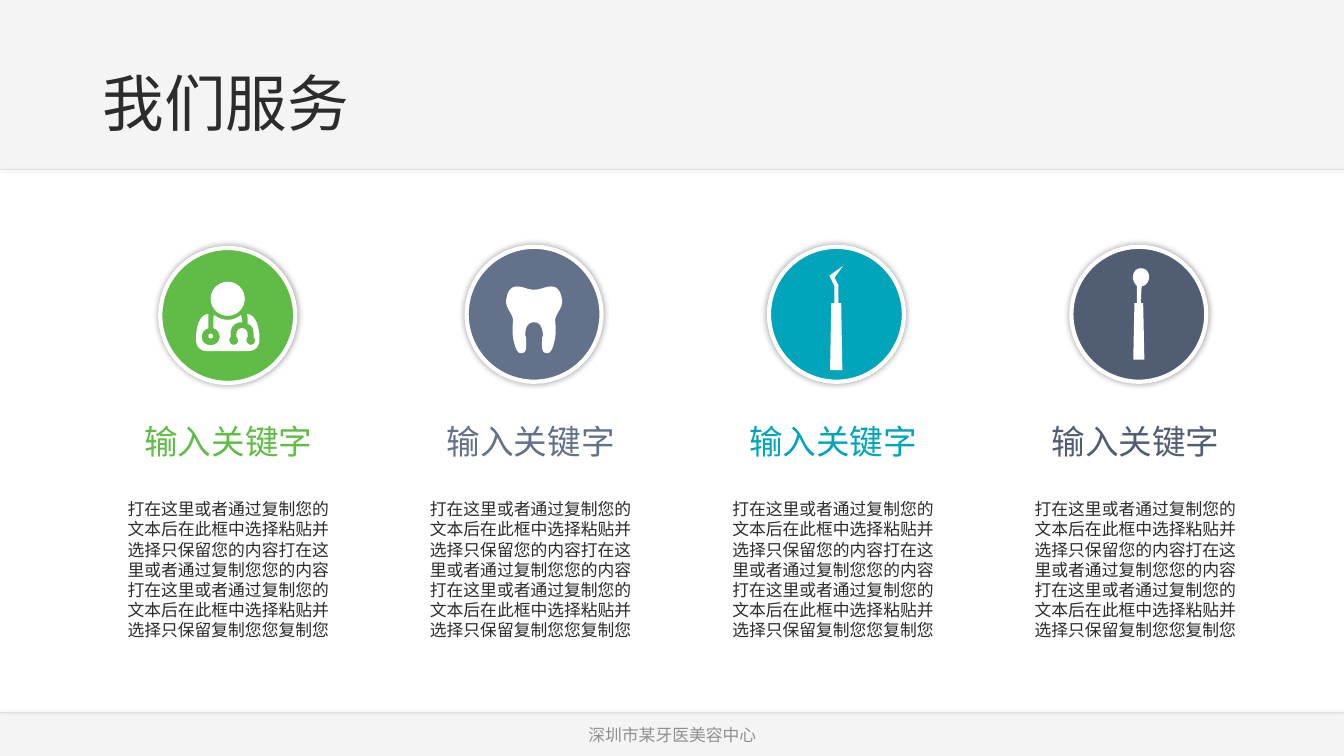
import math

from lxml import etree
from pptx import Presentation
from pptx.dml.color import RGBColor
from pptx.enum import shapes, text
from pptx.oxml import ns
from pptx.util import Cm, Pt

INK = RGBColor(0x2C, 0x2C, 0x2C)
WHITE = RGBColor(0xFF, 0xFF, 0xFF)
BAND = RGBColor(0xF4, 0xF4, 0xF4)
RULE = RGBColor(0xE0, 0xE0, 0xE0)
MUTED = RGBColor(0x90, 0x90, 0x90)
GREEN = RGBColor(0x60, 0xBC, 0x46)
SLATE = RGBColor(0x63, 0x71, 0x8B)
TEAL = RGBColor(0x00, 0xA5, 0xBC)
NAVY = RGBColor(0x51, 0x5D, 0x73)

WIDTH, HEIGHT = 33.87, 19.05
COLUMN_LEFT, COLUMN_PITCH, COLUMN_WIDTH = 2.87, 7.62, 5.77
CIRCLE_SIZE = 3.4
KEYWORD = "输入关键字"
DESCRIPTION = (
    "打在这里或者通过复制您的文本后在此框中选择粘贴并选择只保留您的内容"
    "打在这里或者通过复制您您的内容打在这里或者通过复制您的文本后在此框中"
    "选择粘贴并选择只保留复制您您复制您"
)


def circle(x, y, radius, count=32):
    return [
        (x + radius * math.cos(math.tau * i / count), y + radius * math.sin(math.tau * i / count))
        for i in range(count)
    ]


def flatten(nodes, steps=8):
    """Turn nodes into points; a node of six numbers is a Bézier segment."""
    points = []
    for node in nodes:
        if len(node) == 2:
            points.append(node)
            continue
        controls = [points[-1], node[:2], node[2:4], node[4:]]
        for step in range(1, steps + 1):
            t = step / steps
            weights = ((1 - t) ** 3, 3 * t * (1 - t) ** 2, 3 * t * t * (1 - t), t ** 3)
            points.append(tuple(
                sum(w * c[axis] for w, c in zip(weights, controls)) for axis in (0, 1)
            ))
    return points


# Icon outlines: offsets from the circle's centre, in cm / 100.
DOCTOR = [
    circle(0, -42, 43),
    circle(-43, 52, 6),
    [(80, 60), (80, 78, 70, 90, 50, 90), (-50, 90), (-70, 90, -80, 78, -80, 60),
     (-80, 30, -72, -2, -49, -4), (-49, 32), (-72, 38, -72, 75, -43, 75),
     (-14, 75, -14, 38, -36, 32), (-36, 9), (-36, 4, -36, 2, -34, -1),
     (-14, 15, 14, 15, 33, -1), (36, 9), (36, 17), (15, 17, 7, 30, 7, 47), (7, 54),
     (0, 62, 6, 74, 15, 74), (26, 74, 30, 62, 22, 54), (22, 47),
     (22, 27, 50, 27, 50, 47), (50, 54), (43, 62, 49, 74, 58, 74),
     (69, 74, 72, 62, 65, 54), (65, 47), (65, 32, 62, 26, 50, 21),
     (50, 9), (50, 4, 50, 0, 48, -4), (72, -2, 80, 30, 80, 60)],
]
TOOTH = [[
    (0, 20), (15, 20, 20, 32, 22, 48), (23, 51, 22, 55, 20, 60),
    (20, 81, 17, 98, 33, 98), (43, 98, 48, 84, 53, 60), (56, 36, 53, 22, 53, 12),
    (58, -8, 76, -18, 69, -44), (66, -58, 59, -66, 51, -69),
    (33, -74, 20, -62, 0, -62), (-20, -62, -33, -74, -51, -69),
    (-59, -66, -66, -58, -69, -44), (-76, -18, -58, -8, -53, 12),
    (-53, 22, -56, 36, -53, 60), (-48, 84, -43, 98, -33, 98),
    (-17, 98, -20, 81, -20, 60), (-22, 55, -23, 51, -22, 48), (-22, 32, -15, 20, 0, 20),
]]
PROBE = [[
    (17, -122), (-10, -103), (-18, -97), (-5, -71), (-5, -28), (-13, -28), (-16, 141),
    (15, 141), (12, -28), (5, -28), (5, -74), (-5, -92),
]]
MIRROR = [
    [(-11, -28), (11, -28), (14, 114), (-14, 114)],
    [(5, -116), (18, -116, 26, -106, 26, -94), (26, -82, 18, -72, 7, -70), (5, -28),
     (-5, -28), (-5, -72), (-10, -76, -15, -84, -15, -95), (-14, -107, -6, -116, 5, -116)],
]


class SlideBuilder:
    def __init__(self, presentation):
        self.slide = presentation.slides.add_slide(presentation.slide_layouts[5])
        self.shapes = self.slide.shapes

    def paint(self, shape, fill, line=None):
        shape.shadow.inherit = False
        shape.fill.solid()
        shape.fill.fore_color.rgb = fill
        if line is None:
            shape.line.fill.background()
        else:
            shape.line.color.rgb = line
            shape.line.width = Pt(3)

    def add_shadow(self, shape, blur, distance, degrees, opacity):
        properties = shape._element.spPr
        effects = properties.find(ns.qn("a:effectLst"))
        if effects is None:
            effects = etree.SubElement(properties, ns.qn("a:effectLst"))
        shadow = etree.SubElement(
            effects, ns.qn("a:outerShdw"), blurRad=str(Pt(blur)), dist=str(Pt(distance)),
            dir=str(degrees * 60000), algn="ctr", rotWithShape="0",
        )
        color = etree.SubElement(shadow, ns.qn("a:srgbClr"), val="000000")
        etree.SubElement(color, ns.qn("a:alpha"), val=str(opacity * 1000))

    def band(self, top, height, rule_top, shadow_degrees):
        shape = self.shapes.add_shape(
            shapes.MSO_SHAPE.RECTANGLE, 0, Cm(top), Cm(WIDTH), Cm(height)
        )
        self.paint(shape, BAND)
        rule = self.shapes.add_connector(
            shapes.MSO_CONNECTOR.STRAIGHT, 0, Cm(rule_top), Cm(WIDTH), Cm(rule_top)
        )
        rule.line.color.rgb = RULE
        rule.line.width = Pt(0.5)
        self.add_shadow(rule, 2, 1, shadow_degrees, 10)

    def fill_text(self, frame, content, size, color, font="Calibri"):
        paragraph = frame.paragraphs[0]
        run = paragraph.add_run()
        run.text = content
        run.font.name = font
        run.font.size = Pt(size)
        run.font.color.rgb = color
        return paragraph

    def title(self, content):
        title = self.shapes.title
        self.shapes._spTree.append(title._element)  # in front of the bands
        title.left, title.top, title.width, title.height = Cm(2.33), Cm(1.02), Cm(29.2), Cm(2.62)
        title.text_frame.vertical_anchor = text.MSO_ANCHOR.BOTTOM
        paragraph = self.fill_text(title.text_frame, content, 44, INK)
        paragraph.alignment = text.PP_ALIGN.LEFT
        paragraph.line_spacing = 0.9

    def label(self, left, top, width, height, content, size, color,
              anchor=text.MSO_ANCHOR.TOP, font="Calibri", space_after=0):
        box = self.shapes.add_textbox(Cm(left), Cm(top), Cm(width), Cm(height))
        box.text_frame.word_wrap = True
        box.text_frame.vertical_anchor = anchor
        paragraph = self.fill_text(box.text_frame, content, size, color, font)
        paragraph.alignment = text.PP_ALIGN.CENTER
        paragraph.space_after = Pt(space_after)

    def icon(self, contours, center_x, center_y):
        outlines = [
            [(Cm(center_x + x / 100), Cm(center_y + y / 100)) for x, y in flatten(contour)]
            for contour in contours
        ]
        builder = self.shapes.build_freeform(*outlines[0][0])
        for index, outline in enumerate(outlines):
            if index:
                builder.move_to(*outline[0])
            builder.add_line_segments(outline[1:], close=True)
        self.paint(builder.convert_to_shape(), WHITE)

    def service(self, left, circle_left, circle_top, color, contours):
        disc = self.shapes.add_shape(
            shapes.MSO_SHAPE.OVAL, Cm(circle_left), Cm(circle_top), Cm(CIRCLE_SIZE), Cm(CIRCLE_SIZE)
        )
        self.paint(disc, color, WHITE)
        self.add_shadow(disc, 5, 0, 0, 40)
        self.icon(contours, circle_left + CIRCLE_SIZE / 2, circle_top + CIRCLE_SIZE / 2)
        self.label(left, 12.45, COLUMN_WIDTH, 3.84, DESCRIPTION, 12, INK,
                   font="Noto Sans CJK SC", space_after=10)
        self.label(left, 10.49, COLUMN_WIDTH, 1.27, KEYWORD, 24, color,
                   text.MSO_ANCHOR.BOTTOM, space_after=10)


def main():
    presentation = Presentation()
    presentation.slide_width, presentation.slide_height = Cm(WIDTH), Cm(HEIGHT)
    builder = SlideBuilder(presentation)
    builder.band(0, 4.27, 4.27, 90)
    builder.band(17.96, 1.09, 17.96, 270)
    builder.title("我们服务")
    builder.label(11.23, 18.01, 11.43, 1.02, "深圳市某牙医美容中心", 12, MUTED, text.MSO_ANCHOR.MIDDLE)
    services = [
        (4.04, 6.25, GREEN, DOCTOR),
        (11.76, 6.22, SLATE, TOOTH),
        (19.38, 6.22, TEAL, PROBE),
        (27, 6.22, NAVY, MIRROR),
    ]
    for index, service in enumerate(services):
        builder.service(COLUMN_LEFT + index * COLUMN_PITCH, *service)
    presentation.save("out.pptx")


if __name__ == "__main__":
    main()
